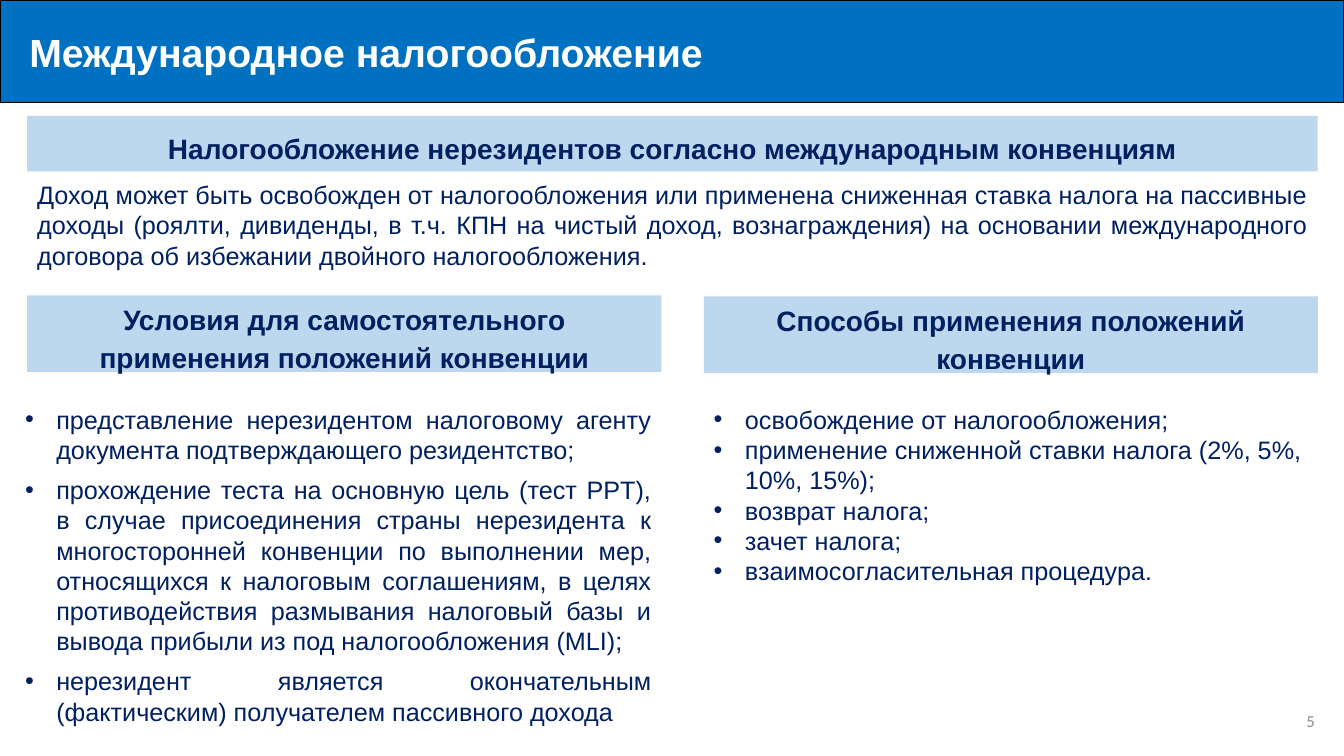
from lxml.etree import SubElement
from pptx import Presentation
from pptx.dml.color import RGBColor
from pptx.enum.shapes import MSO_SHAPE
from pptx.enum.text import MSO_ANCHOR, MSO_AUTO_SIZE, PP_ALIGN
from pptx.oxml.ns import qn
from pptx.util import Inches, Pt

NAVY, BLUE, PALE, WHITE, BLACK, GREY = "002060", "0070C0", "BDD7EE", "FFFFFF", "000000", "8C8C8C"

HEADING = "Международное налогообложение"
TOPIC = "Налогообложение нерезидентов согласно международным конвенциям"
SUMMARY = (
    "Доход может быть освобожден от налогообложения или применена сниженная ставка налога "
    "на пассивные доходы (роялти, дивиденды, в т.ч. КПН на чистый доход, вознаграждения) "
    "на основании международного договора об избежании двойного налогообложения."
)
CONDITIONS_HEADING = "Условия для самостоятельного применения положений конвенции"
CONDITIONS = [
    "представление нерезидентом налоговому агенту документа подтверждающего резидентство;",
    "прохождение теста на основную цель (тест PPT), в случае присоединения страны нерезидента "
    "к многосторонней конвенции по выполнении мер, относящихся к налоговым соглашениям, в целях "
    "противодействия размывания налоговый базы и вывода прибыли из под налогообложения (MLI);",
    "нерезидент является окончательным (фактическим) получателем пассивного дохода",
]
METHODS_HEADING = "Способы применения положений конвенции"
METHODS = [
    "освобождение от налогообложения;",
    "применение сниженной ставки налога (2%, 5%, 10%, 15%);",
    "возврат налога;",
    "зачет налога;",
    "взаимосогласительная процедура.",
]


def color(value):
    """Turn a hex string into a colour."""
    return RGBColor.from_string(value)


def lengths(box):
    """Turn left, top, width and height in inches into lengths."""
    return [Inches(side) for side in box]


def format_text(paragraph, size, hue, align, bold=False, font="Arial"):
    """Align a paragraph and set the font of its runs."""
    paragraph.alignment = align
    for run in paragraph.runs:
        run.font.name = font
        run.font.size = Pt(size)
        run.font.bold = bold
        run.font.color.rgb = color(hue)


def add_heading(slide, box):
    """Place the slide title as a blue bar in the box."""
    heading = slide.shapes.title
    heading.left, heading.top, heading.width, heading.height = lengths(box)
    heading.fill.solid()
    heading.fill.fore_color.rgb = color(BLUE)
    heading.line.color.rgb = color(BLACK)
    heading.line.width = Pt(1)
    frame = heading.text_frame
    frame.text = HEADING
    frame.auto_size = MSO_AUTO_SIZE.NONE
    frame.vertical_anchor = MSO_ANCHOR.MIDDLE
    frame.margin_left = Inches(0.29)
    format_text(frame.paragraphs[0], 28, WHITE, PP_ALIGN.LEFT, bold=True)


def add_band(slide, box, caption):
    """Place a pale section band with a centred caption."""
    band = slide.shapes.add_shape(MSO_SHAPE.RECTANGLE, *lengths(box))
    band.shadow.inherit = False
    band.fill.solid()
    band.fill.fore_color.rgb = color(PALE)
    band.line.fill.background()
    frame = band.text_frame
    frame.text = caption
    frame.word_wrap = True
    frame.vertical_anchor = MSO_ANCHOR.MIDDLE
    frame.margin_top = Inches(0.09)
    frame.paragraphs[0].line_spacing = 1.14
    format_text(frame.paragraphs[0], 20, NAVY, PP_ALIGN.CENTER, bold=True)


def add_text(slide, box, content):
    """Place a wrapping text box and return its frame."""
    frame = slide.shapes.add_textbox(*lengths(box)).text_frame
    frame.word_wrap = True
    frame.text = content
    return frame


def add_summary(slide, box):
    """Place the justified summary paragraph."""
    frame = add_text(slide, box, SUMMARY)
    format_text(frame.paragraphs[0], 18, NAVY, PP_ALIGN.JUSTIFY)


def add_bullets(slide, box, points, align, gap=0):
    """Place a bulleted list with a gap in points between its items."""
    frame = add_text(slide, box, "\n".join(points))
    for index, paragraph in enumerate(frame.paragraphs):
        properties = paragraph._p.get_or_add_pPr()
        properties.set("marL", str(Inches(0.31)))
        properties.set("indent", str(-Inches(0.31)))
        SubElement(properties, qn("a:buFont"), typeface="Arial")
        SubElement(properties, qn("a:buChar"), char="•")
        if index and gap:
            paragraph.space_before = Pt(gap)
        format_text(paragraph, 18, NAVY, align)


def add_page_number(slide, box, number):
    """Place the grey page number at the right of the box."""
    frame = add_text(slide, box, str(number))
    frame.vertical_anchor = MSO_ANCHOR.MIDDLE
    format_text(frame.paragraphs[0], 12, GREY, PP_ALIGN.RIGHT, font="Calibri")


def main():
    """Build the slide and save it."""
    deck = Presentation()
    deck.slide_width, deck.slide_height = Inches(13.33), Inches(7.5)
    slide = deck.slides.add_slide(deck.slide_layouts[5])
    add_heading(slide, (0, 0, 13.33, 1.02))
    add_band(slide, (0.27, 1.15, 12.8, 0.55), TOPIC)
    add_summary(slide, (0.27, 1.73, 12.8, 1.01))
    add_band(slide, (0.27, 2.93, 6.29, 0.76), CONDITIONS_HEADING)
    add_bullets(slide, (0.15, 3.96, 6.41, 3.33), CONDITIONS, PP_ALIGN.JUSTIFY, gap=7)
    add_band(slide, (6.98, 2.94, 6.09, 0.76), METHODS_HEADING)
    add_bullets(slide, (6.98, 3.96, 6.09, 1.92), METHODS, PP_ALIGN.LEFT)
    add_page_number(slide, (10.14, 6.95, 3, 0.4), 5)
    deck.save("out.pptx")


if __name__ == "__main__":
    main()
